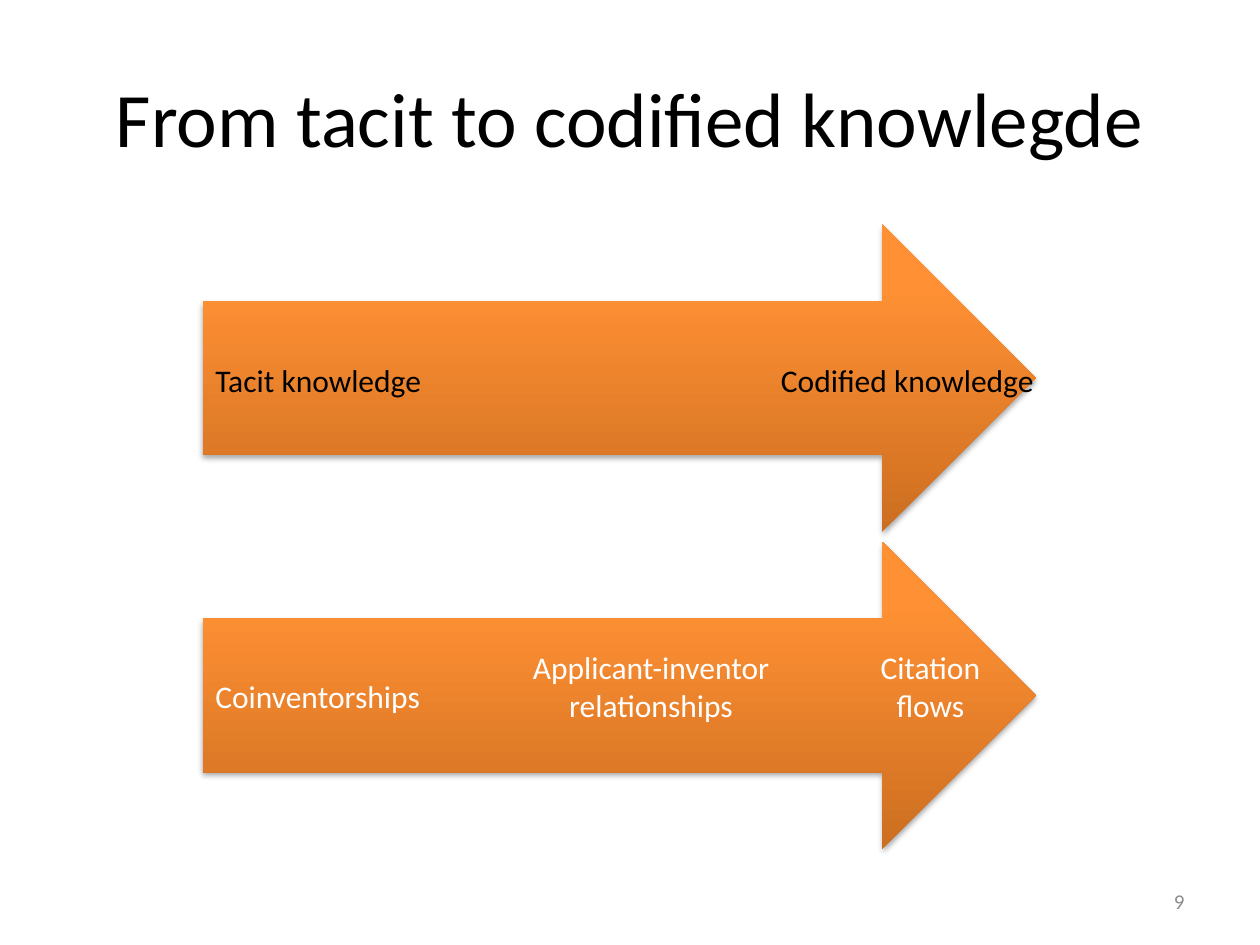
from pptx import Presentation
from pptx.dml.color import RGBColor
from pptx.enum.shapes import MSO_SHAPE
from pptx.enum.text import MSO_ANCHOR, MSO_AUTO_SIZE, PP_ALIGN
from pptx.oxml import parse_xml
from pptx.oxml.ns import nsdecls
from pptx.util import Pt

GRADIENT = f"""<a:gradFill {nsdecls('a')} rotWithShape="1"><a:gsLst>
<a:gs pos="0"><a:srgbClr val="CC6E20"/></a:gs>
<a:gs pos="80000"><a:srgbClr val="FF9034"/></a:gs>
<a:gs pos="100000"><a:srgbClr val="FF9136"/></a:gs>
</a:gsLst><a:lin ang="16200000" scaled="0"/></a:gradFill>"""
SHADOW = f"""<a:effectLst {nsdecls('a')}>
<a:outerShdw blurRad="{Pt(3.1)}" dist="{Pt(1.8)}" dir="5400000" rotWithShape="0">
<a:srgbClr val="000000"><a:alpha val="35000"/></a:srgbClr>
</a:outerShdw></a:effectLst>"""


def add_text(shapes, box, lines, size, color, aligns, **frame):
    sp = shapes.add_textbox(*map(Pt, box))
    tf = sp.text_frame
    for name, value in frame.items():
        setattr(tf, name, value)
    for i, (line, align) in enumerate(zip(lines, aligns)):
        p = tf.paragraphs[0] if i == 0 else tf.add_paragraph()
        p.alignment = align
        r = p.add_run()
        r.text = line
        font = {"name": "Calibri", "size": Pt(size)}
        for name, value in font.items():
            setattr(r.font, name, value)
        r.font.color.rgb = RGBColor.from_string(color)


prs = Presentation()
prs.slide_width, prs.slide_height = Pt(720), Pt(540)
s = prs.slides.add_slide(prs.slide_layouts[6])

# Title and slide number
middle = {"word_wrap": True, "vertical_anchor": MSO_ANCHOR.MIDDLE}
add_text(s.shapes, (36, 21.6, 648, 90), ["From tacit to codified knowlegde"],
         44, "000000", [PP_ALIGN.CENTER], **middle)
add_text(s.shapes, (516, 500.5, 168, 28.75), ["9"],
         12, "8C8C8C", [PP_ALIGN.RIGHT], **middle)

# Arrows: shapes to add to, top, label colour, labels as (box, lines)
arrows = [
    (s.shapes.add_group_shape().shapes, 128.2, "000000", [
        ((116, 202.6, 133.2, 29), ["Tacit knowledge"]),
        ((439.2, 202.6, 160.6, 29), ["Codified knowledge"]),
    ]),
    (s.shapes, 309.6, "FFFFFF", [
        ((116, 383.4, 132.5, 29), ["Coinventorships"]),
        ((496.1, 366.6, 76.3, 51), ["Citation", "flows"]),
        ((297.4, 366.6, 151.9, 51), ["Applicant-inventor", "relationships"]),
    ]),
]
for shapes, top, color, labels in arrows:
    sp = shapes.add_shape(MSO_SHAPE.RIGHT_ARROW, Pt(116), Pt(top), Pt(476), Pt(175.7))
    sp.line.fill.background()
    sp.line._ln.addprevious(parse_xml(GRADIENT))
    sp._element.spPr.append(parse_xml(SHADOW))
    for box, lines in labels:
        add_text(shapes, box, lines, 18, color, [PP_ALIGN.LEFT, PP_ALIGN.CENTER],
                 word_wrap=False, auto_size=MSO_AUTO_SIZE.SHAPE_TO_FIT_TEXT)

prs.save("out.pptx")
